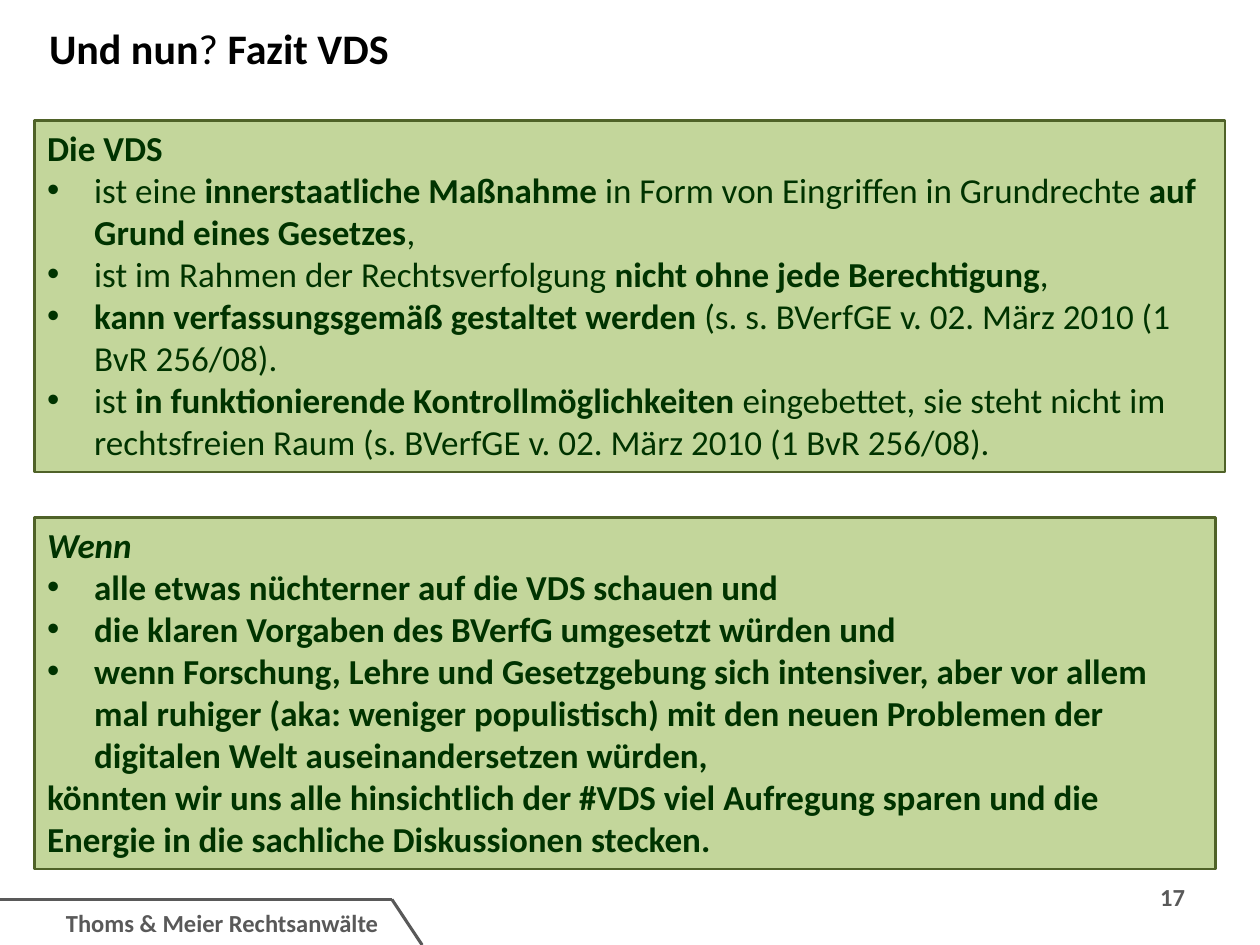
from dataclasses import dataclass

from lxml import etree
from pptx import Presentation
from pptx.dml.color import RGBColor
from pptx.enum.shapes import MSO_CONNECTOR, MSO_SHAPE
from pptx.enum.text import MSO_ANCHOR, PP_ALIGN
from pptx.oxml.ns import qn
from pptx.util import Cm, Pt

RECT = MSO_SHAPE.RECTANGLE
STRAIGHT = MSO_CONNECTOR.STRAIGHT
TOP = MSO_ANCHOR.TOP
LEFT, RIGHT = PP_ALIGN.LEFT, PP_ALIGN.RIGHT

FONT = "Calibri"
BLACK = RGBColor(0x00, 0x00, 0x00)
WHITE = RGBColor(0xFF, 0xFF, 0xFF)
GRAY = RGBColor(0x59, 0x59, 0x59)
PALE_GREEN = RGBColor(0xC3, 0xD6, 0x9B)
OLIVE = RGBColor(0x4F, 0x62, 0x28)
DARK_GREEN = RGBColor(0x00, 0x33, 0x00)
BULLET_INDENT = Cm(0.95)


@dataclass(frozen=True)
class Run:
    text: str
    bold: bool = True
    italic: bool = False


@dataclass(frozen=True)
class Para:
    runs: tuple[Run, ...]
    bullet: bool = False


@dataclass(frozen=True)
class Box:
    left: float
    top: float
    width: float
    height: float


def plain(text: str) -> Run:
    return Run(text, bold=False)


def line_para(text: str, italic: bool = False) -> Para:
    return Para((Run(text, italic=italic),))


def bullet(*runs: Run) -> Para:
    return Para(runs, bullet=True)


def place(box: Box) -> tuple[Cm, Cm, Cm, Cm]:
    return Cm(box.left), Cm(box.top), Cm(box.width), Cm(box.height)


def write(sp, paras: list[Para], size: int, color: RGBColor, align=LEFT) -> None:
    tf = sp.text_frame
    tf.word_wrap = True
    tf.vertical_anchor = TOP
    for i, para in enumerate(paras):
        p = tf.add_paragraph() if i else tf.paragraphs[0]
        p.alignment = align
        if para.bullet:
            pPr = p._p.get_or_add_pPr()
            pPr.set("marL", str(BULLET_INDENT))
            pPr.set("indent", str(-BULLET_INDENT))
            etree.SubElement(pPr, qn("a:buFont"), typeface="Arial")
            etree.SubElement(pPr, qn("a:buChar"), char="•")
        for run in para.runs:
            r = p.add_run()
            r.text = run.text
            r.font.name = FONT
            r.font.size = Pt(size)
            r.font.bold = run.bold
            r.font.italic = run.italic
            r.font.color.rgb = color


def add_label(slide, box: Box, paras: list[Para], size: int, color: RGBColor,
              align=LEFT):
    sp = slide.shapes.add_textbox(*place(box))
    write(sp, paras, size, color, align)
    return sp


def add_panel(slide, box: Box, paras: list[Para]) -> None:
    sp = slide.shapes.add_shape(RECT, *place(box))
    sp.shadow.inherit = False
    sp.fill.solid()
    sp.fill.fore_color.rgb = PALE_GREEN
    sp.line.color.rgb = OLIVE
    sp.line.width = Pt(1.5)
    write(sp, paras, 20, DARK_GREEN)


def add_footer_line(slide, x1: float, y1: float, x2: float, y2: float) -> None:
    line = slide.shapes.add_connector(STRAIGHT, Cm(x1), Cm(y1), Cm(x2), Cm(y2))
    line.line.color.rgb = GRAY
    line.line.width = Pt(1.75)
    etree.SubElement(line._element.spPr, qn("a:effectLst"))


CONDITIONS = [
    line_para("Wenn", italic=True),
    bullet(Run("alle etwas nüchterner auf die VDS schauen und")),
    bullet(Run("die klaren Vorgaben des BVerfG umgesetzt würden und")),
    bullet(Run("wenn Forschung, Lehre und Gesetzgebung sich intensiver, aber vor "
               "allem mal ruhiger (aka: weniger populistisch) mit den neuen "
               "Problemen der digitalen Welt auseinandersetzen würden,")),
    line_para("könnten wir uns alle hinsichtlich der #VDS viel Aufregung sparen "
              "und die Energie in die sachliche Diskussionen stecken."),
]

FINDINGS = [
    line_para("Die VDS"),
    bullet(plain("ist eine "), Run("innerstaatliche Maßnahme "),
           plain("in Form von Eingriffen in Grundrechte "),
           Run("auf Grund eines Gesetzes"), plain(",")),
    bullet(plain("ist im Rahmen der Rechtsverfolgung "),
           Run("nicht ohne jede Berechtigung"), plain(",")),
    bullet(Run("kann verfassungsgemäß gestaltet werden "),
           plain("(s. s. BVerfGE v. 02. März 2010 (1 BvR 256/08).")),
    bullet(plain("ist "), Run("in funktionierende Kontrollmöglichkeiten "),
           plain("eingebettet, sie steht nicht im rechtsfreien Raum "
                 "(s. BVerfGE v. 02. März 2010 (1 BvR 256/08).")),
]

TITLE = [Para((Run("Und nun"), plain("? "), Run("Fazit VDS")))]


def main() -> None:
    prs = Presentation()
    prs.slide_width, prs.slide_height = Cm(25.4), Cm(19.05)
    slide = prs.slides.add_slide(prs.slide_layouts[6])

    add_footer_line(slide, 7.9, 18.13, 0, 18.13)
    add_footer_line(slide, 8.51, 19.05, 7.9, 18.13)
    add_label(slide, Box(1.08, 18.18, 7.3, 0.86),
              [line_para("Thoms & Meier Rechtsanwälte")], 14, GRAY)
    add_label(slide, Box(18.22, 17.65, 5.92, 1.02),
              [line_para("17")], 14, GRAY, align=RIGHT)

    title = add_label(slide, Box(0.74, 0.33, 21.36, 2.21), TITLE, 24, BLACK)
    title.line.color.rgb = WHITE
    title.line.width = Pt(0.75)

    add_panel(slide, Box(0.7, 10.43, 23.8, 7.09), CONDITIONS)
    add_panel(slide, Box(0.7, 2.43, 24, 7.09), FINDINGS)

    prs.save("out.pptx")


if __name__ == "__main__":
    main()
